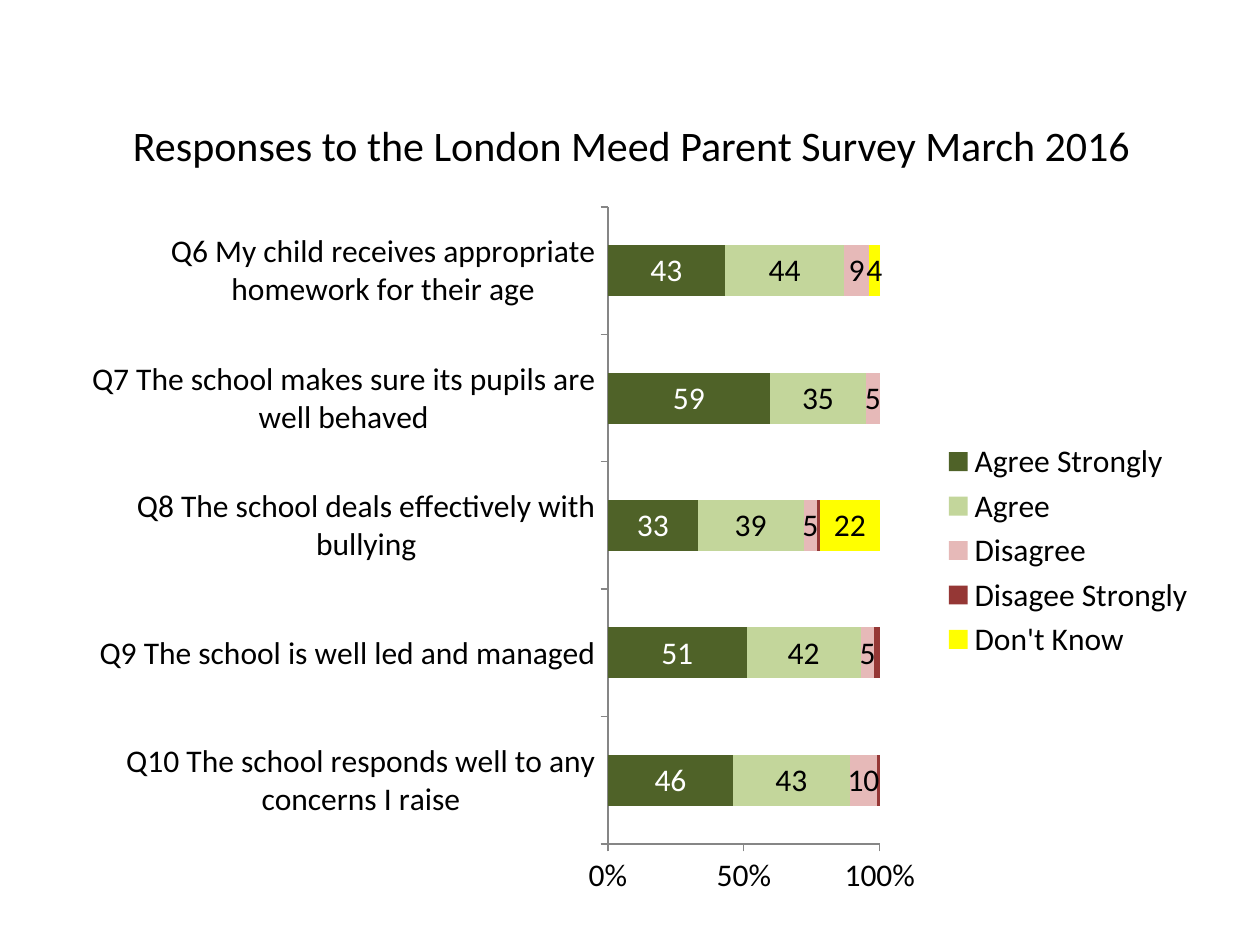
from lxml import etree
from pptx import Presentation
from pptx import util as u
from pptx.chart.data import CategoryChartData
from pptx.dml.color import RGBColor
from pptx.enum import chart as ch, text
from pptx.oxml.ns import qn

FONT = "Calibri"
COLORS = {"text": "000000", "light": "FFFFFF", "axis": "868686",
          "agree_strongly": "4F6228", "agree": "C3D69B", "disagree": "E6B9B8",
          "disagree_strongly": "953735", "unknown": "FFFF00"}

QUESTIONS = [
    "Q10 The school responds well to any concerns I raise",
    "Q9 The school is well led and managed",
    "Q8 The school deals effectively with bullying",
    "Q7 The school makes sure its pupils are well behaved",
    "Q6 My child receives appropriate homework for their age",
]
# Answer, values, fill colour, label colour (None for no labels)
ANSWERS = [
    ("Agree Strongly", (46, 51, 33, 59, 43), "agree_strongly", "light"),
    ("Agree", (43, 42, 39, 35, 44), "agree", "text"),
    ("Disagree", (10, 5, 5, 5, 9), "disagree", "text"),
    ("Disagee Strongly", (1, 2, 1, None, None), "disagree_strongly", None),
    ("Don't Know", (None, None, 22, None, 4), "unknown", "text"),
]


def color(name):
    return RGBColor.from_string(COLORS[name])


def style_font(font, size, name="text"):
    font.name, font.size = FONT, u.Pt(size)
    font.color.rgb = color(name)


def add_title(page, left, top, width, height):
    box = page.shapes.add_textbox(left, top, width, height)
    frame = box.text_frame
    frame.word_wrap = False
    frame.auto_size = text.MSO_AUTO_SIZE.SHAPE_TO_FIT_TEXT
    para = frame.paragraphs[0]
    para.alignment = text.PP_ALIGN.RIGHT
    span = para.add_run()
    span.text = "Responses to the London Meed Parent Survey March 2016"
    style_font(span.font, 24)


def place_plot(chart, x, y, w, h):
    """Fix the inner plot area, in fractions of the chart box."""
    area = chart.plots[0]._element.getparent()
    for old in area.findall(qn("c:layout")):
        area.remove(old)
    layout = etree.Element(qn("c:layout"))
    area.insert(0, layout)
    manual = etree.SubElement(layout, qn("c:manualLayout"))
    for tag, value in (("layoutTarget", "inner"), ("xMode", "edge"), ("yMode", "edge"),
                       ("x", x), ("y", y), ("w", w), ("h", h)):
        etree.SubElement(manual, qn("c:" + tag)).set("val", str(value))


def style_axis(axis):
    axis.has_major_gridlines = False
    axis.major_tick_mark = ch.XL_TICK_MARK.OUTSIDE
    axis.minor_tick_mark = ch.XL_TICK_MARK.NONE
    axis.format.line.color.rgb = color("axis")
    axis.format.line.width = u.Pt(0.75)
    style_font(axis.tick_labels.font, 18)


def add_survey_chart(page, left, top, width, height):
    data = CategoryChartData()
    data.categories = QUESTIONS
    for name, values, _, _ in ANSWERS:
        data.add_series(name, values)
    chart = page.shapes.add_chart(ch.XL_CHART_TYPE.BAR_STACKED_100,
                                  left, top, width, height, data).chart
    style_font(chart.font, 18)
    chart.has_title = False

    # Bars and their labels
    plot = chart.plots[0]
    plot.gap_width, plot.overlap = 150, 100
    plot.vary_by_categories = False
    for series, (_, _, fill, label) in zip(plot.series, ANSWERS):
        series.format.fill.solid()
        series.format.fill.fore_color.rgb = color(fill)
        if label:
            series.data_labels.show_value = True
            style_font(series.data_labels.font, 18, label)

    # Axes
    style_axis(chart.category_axis)
    style_axis(chart.value_axis)
    chart.value_axis.major_unit = 0.5
    chart.value_axis.tick_labels.number_format = "0%"
    chart.value_axis.tick_labels.number_format_is_linked = False

    # Legend
    chart.has_legend = True
    chart.legend.position = ch.XL_LEGEND_POSITION.RIGHT
    chart.legend.include_in_layout = False
    style_font(chart.legend.font, 18)
    place_plot(chart, 0.47, 0.02, 0.24, 0.89)


def main():
    deck = Presentation()
    deck.slide_width, deck.slide_height = u.Inches(10), u.Inches(7.5)
    page = deck.slides.add_slide(deck.slide_layouts[6])
    add_survey_chart(page, u.Inches(0.6), u.Inches(1.53), u.Inches(8.99), u.Inches(5.68))
    add_title(page, u.Inches(0.84), u.Inches(0.9), u.Inches(8.23), u.Inches(0.5))
    deck.save("out.pptx")


if __name__ == "__main__":
    main()
